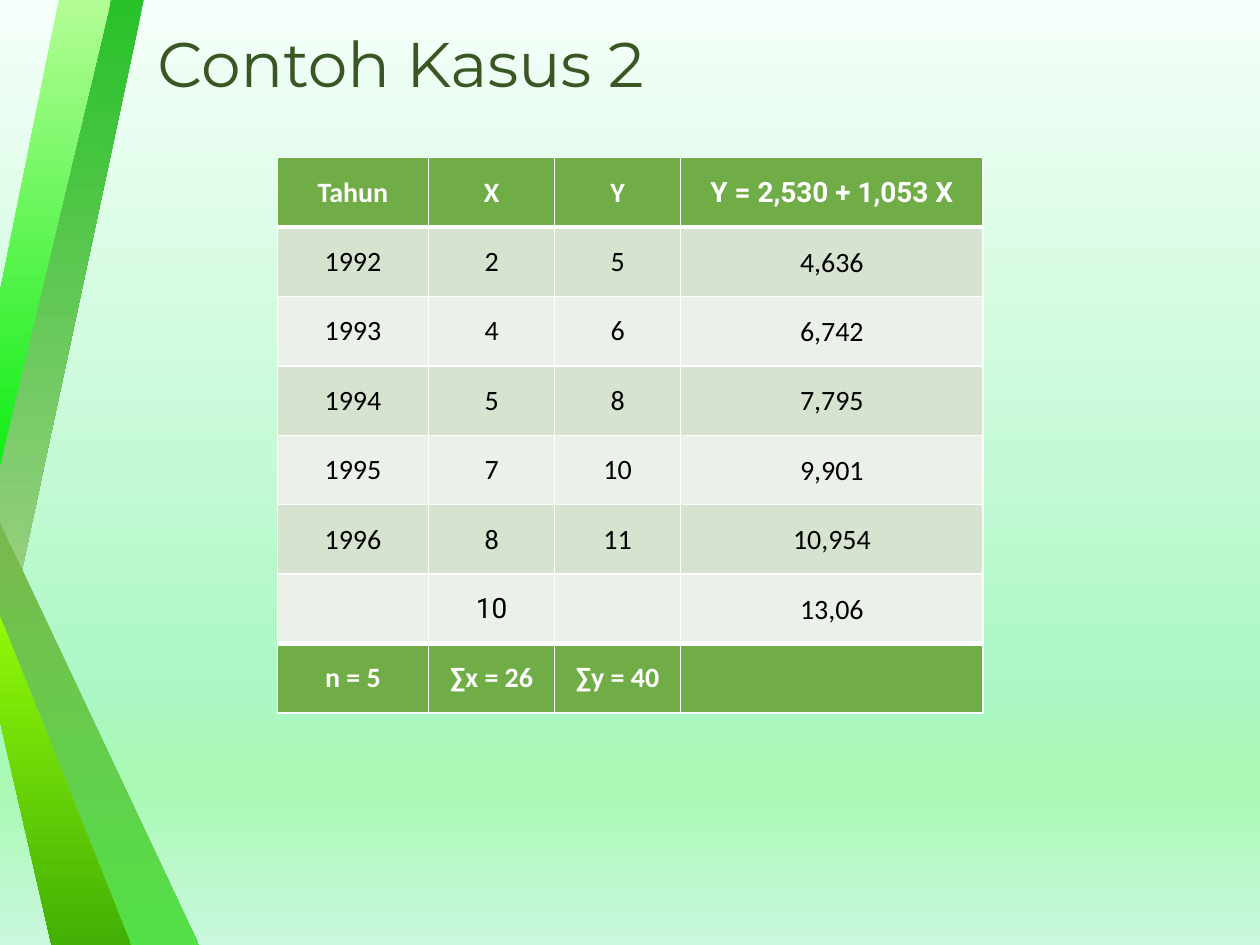
from dataclasses import dataclass

from lxml import etree
from pptx import Presentation
from pptx import util as u
from pptx.dml.color import RGBColor
from pptx.enum import text
from pptx.oxml.ns import qn

HUES = {
    "head": "70AD47", "odd": "D5E3CF", "even": "EBF1E9",
    "white": "FFFFFF", "black": "000000", "title": "385723",
}
BACK = [(0, "F5FFF9"), (74, "ABF7C3"), (83, "A9F9B3"), (100, "C8F8DE")]
WIDE, TALL = 25.4, 19.05


@dataclass
class Band:
    top: str
    end: str
    spots: list[tuple[float, float]]


@dataclass
class Row:
    cells: list[str]
    fill: str
    strong: bool = False


BANDS = [
    Band("29C129", "A9D18E", [(0, 9.3), (0, 13.56), (2.9, 0), (2.21, 0)]),
    Band("B3FD95", "11ED16", [(0, 5.89), (0, 9.35), (2.24, 0), (1.19, 0)]),
    Band("7AB850", "53E048", [(0, 10.54), (4.01, TALL), (2.57, TALL), (0, 12.73)]),
    Band("91F907", "42AF05", [(0, 14.53), (0, 12.42), (2.64, TALL), (1.04, TALL)]),
]
ROWS = [
    Row(["Tahun", "X", "Y", "Y = 2,530 + 1,053 X"], "head", True),
    Row(["1992", "2", "5", "4,636"], "odd"),
    Row(["1993", "4", "6", "6,742"], "even"),
    Row(["1994", "5", "8", "7,795"], "odd"),
    Row(["1995", "7", "10", "9,901"], "even"),
    Row(["1996", "8", "11", "10,954"], "odd"),
    Row(["", "10", "", "13,06"], "even"),
    Row(["n = 5", "∑x = 26", "∑y = 40", ""], "head", True),
]
COLS = [3.05, 2.54, 2.54, 6.1]
HIGH = 1.4
ROBOTO = {(0, 3), (6, 1)}


def paint(fill, root, stops: list[tuple[int, str]]) -> None:
    fill.gradient()
    fill.gradient_angle = 270
    group = next(root.iter(qn("a:gsLst")))
    for old in list(group):
        group.remove(old)
    for place, hue in stops:
        stop = etree.SubElement(group, qn("a:gs"), pos=str(place * 1000))
        etree.SubElement(stop, qn("a:srgbClr"), val=hue)


def draw_band(slide, band: Band) -> None:
    spots = [(u.Cm(x), u.Cm(y)) for x, y in band.spots]
    pen = slide.shapes.build_freeform(*spots[0])
    pen.add_line_segments(spots[1:], close=True)
    shape = pen.convert_to_shape()
    shape.shadow.inherit = False
    shape.line.fill.background()
    paint(shape.fill, shape.element.spPr, [(0, band.top), (100, band.end)])


def write(par, words: str, size: int, face: str, hue: str, bold: bool) -> None:
    run = par.add_run()
    run.text = words
    font = run.font
    font.size, font.name, font.bold = u.Pt(size), face, bold
    font.color.rgb = RGBColor.from_string(HUES[hue])


def edge(cell, side: str, width: int) -> None:
    props = cell._tc.get_or_add_tcPr()
    line = etree.SubElement(props, qn(f"a:ln{side}"), w=str(u.Pt(width)))
    solid = etree.SubElement(line, qn("a:solidFill"))
    etree.SubElement(solid, qn("a:srgbClr"), val=HUES["white"])


def draw_cell(cell, row: Row, r: int, c: int) -> None:
    last = len(ROWS) - 1
    edge(cell, "L", 1)
    edge(cell, "R", 1)
    edge(cell, "T", 3 if r in (1, last) else 1)
    edge(cell, "B", 3 if r in (0, last - 1) else 1)
    cell.fill.solid()
    cell.fill.fore_color.rgb = RGBColor.from_string(HUES[row.fill])
    cell.vertical_anchor = text.MSO_ANCHOR.MIDDLE
    if c == len(COLS) - 1 and not row.strong:
        cell.margin_left = cell.margin_right = cell.margin_top = u.Cm(0.03)
        cell.margin_bottom = 0
    if row.cells[c]:
        par = cell.text_frame.paragraphs[0]
        par.alignment = text.PP_ALIGN.CENTER
        face = "Roboto" if (r, c) in ROBOTO else "Calibri"
        ink = "white" if row.strong else "black"
        write(par, row.cells[c], 16, face, ink, row.strong)


def draw_table(slide) -> None:
    frame = slide.shapes.add_table(
        len(ROWS), len(COLS), u.Cm(5.59), u.Cm(3.18),
        u.Cm(sum(COLS)), u.Cm(HIGH * len(ROWS)))
    table = frame.table
    table.horz_banding = False
    for col, width in zip(table.columns, COLS):
        col.width = u.Cm(width)
    for r, row in enumerate(ROWS):
        table.rows[r].height = u.Cm(HIGH)
        for c in range(len(COLS)):
            draw_cell(table.cell(r, c), row, r, c)


def draw_title(slide) -> None:
    title = slide.shapes.title
    title.left, title.top = u.Cm(2.92), u.Cm(0.53)
    title.width, title.height = u.Cm(21.9), u.Cm(1.65)
    frame = title.text_frame
    frame.auto_size = text.MSO_AUTO_SIZE.NONE
    frame.vertical_anchor = text.MSO_ANCHOR.MIDDLE
    par = frame.paragraphs[0]
    par.alignment = text.PP_ALIGN.LEFT
    par.line_spacing = 0.9
    write(par, "Contoh Kasus 2", 36, "Montserrat", "title", False)


def main() -> None:
    deck = Presentation()
    deck.slide_width, deck.slide_height = u.Cm(WIDE), u.Cm(TALL)
    slide = deck.slides.add_slide(deck.slide_layouts[5])
    paint(slide.background.fill, slide.element, BACK)
    for band in BANDS:
        draw_band(slide, band)
    draw_title(slide)
    draw_table(slide)
    deck.save("out.pptx")


if __name__ == "__main__":
    main()
